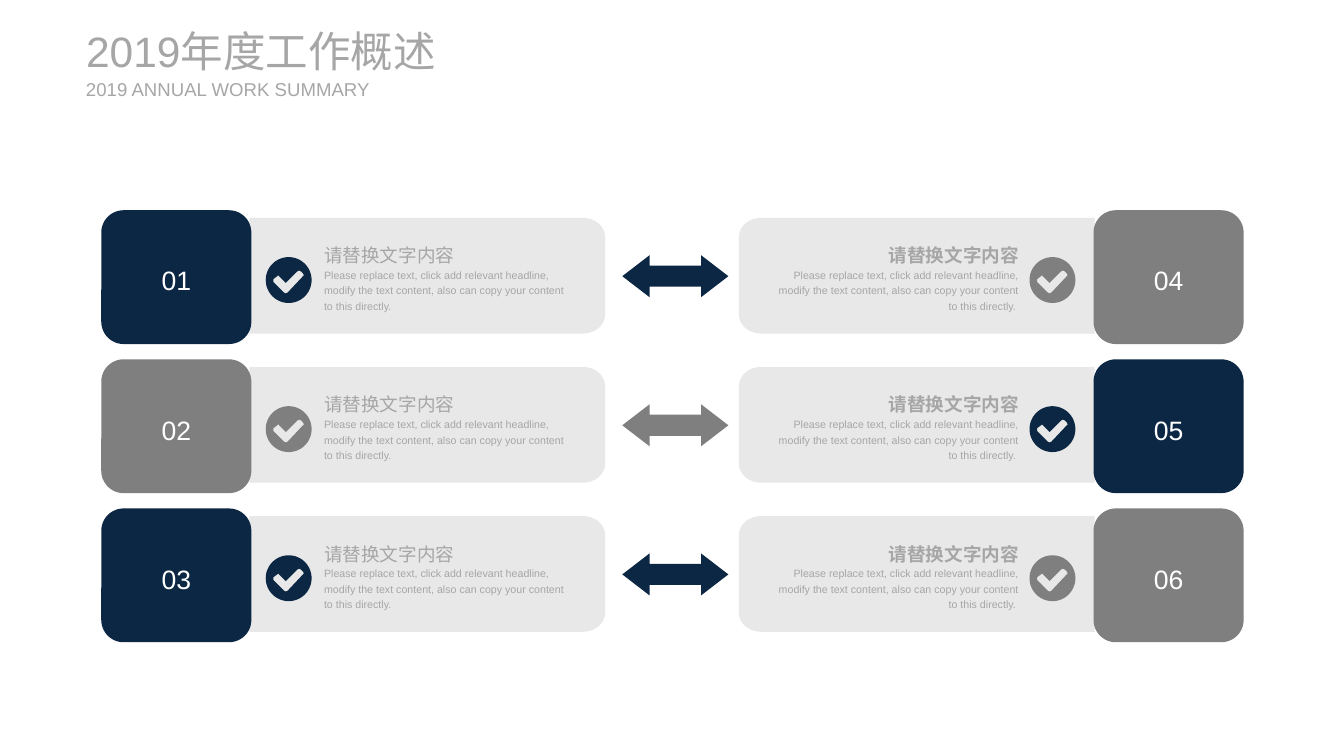
from dataclasses import dataclass
from math import cos, radians, sin

from lxml.etree import SubElement
from pptx import Presentation
from pptx.dml.color import RGBColor
from pptx.enum.shapes import MSO_SHAPE as Preset
from pptx.enum.text import MSO_ANCHOR as Anchor, MSO_AUTO_SIZE as AutoSize, PP_ALIGN as Align
from pptx.oxml.ns import qn
from pptx.util import Inches, Pt


@dataclass(frozen=True)
class Theme:
    navy: RGBColor = RGBColor(0x0C, 0x27, 0x44)
    gray: RGBColor = RGBColor(0x7F, 0x7F, 0x7F)
    panel: RGBColor = RGBColor(0xE6, 0xE6, 0xE6)
    text: RGBColor = RGBColor(0xA6, 0xA6, 0xA6)
    white: RGBColor = RGBColor(0xFF, 0xFF, 0xFF)
    font: str = "Arial"
    title: Pt = Pt(32)
    heading: Pt = Pt(14)
    body: Pt = Pt(8)
    number: Pt = Pt(20)


THEME = Theme()
ROWS = 3
ROW_PITCH = 1.56
PANEL_W, PANEL_H = 3.72, 1.21
CORNER_W, CORNER_H = 0.23, 0.2
BADGE_SIZE = 0.48
HEADING = "请替换文字内容"
BODY = ("Please replace text, click add relevant headline, modify the text content, "
        "also can copy your content to this directly.")
# Tick outline, measured from the badge's top left corner
TICK = [(0.39, 0.17), (0.37, 0.15), (0.35, 0.14), (0.33, 0.15), (0.21, 0.27),
        (0.14, 0.2), (0.13, 0.19), (0.12, 0.2), (0.08, 0.23), (0.08, 0.26),
        (0.19, 0.37), (0.21, 0.38), (0.23, 0.37), (0.39, 0.2), (0.4, 0.19)]


def set_values(target, values):
    for name, value in values.items():
        setattr(target, name, value)


def paint(shape, color, opacity=100):
    shape.shadow.inherit = False
    shape.fill.solid()
    shape.fill.fore_color.rgb = color
    shape.line.fill.background()
    if opacity < 100:
        tint = shape.fill._xPr.find(qn("a:solidFill"))[0]
        SubElement(tint, qn("a:alpha")).set("val", str(opacity * 1000))


def arc(center_x, center_y, radius_x, radius_y, start, sweep, steps):
    angles = [radians(start + sweep * i / steps) for i in range(steps + 1)]
    return [(center_x + radius_x * cos(a), center_y + radius_y * sin(a)) for a in angles]


def add_outline(slide, contours, color, opacity=100):
    scaled = [[(Inches(x), Inches(y)) for x, y in points] for points in contours]
    builder = slide.shapes.build_freeform(*scaled[0][0], scale=1.0)
    for index, points in enumerate(scaled):
        if index:
            builder.move_to(*points[0])
        builder.add_line_segments(points[1:], close=True)
    paint(builder.convert_to_shape(), color, opacity)


def add_panel(slide, left, top, rounded_left):
    inner_x = PANEL_W - CORNER_W
    points = [(0, 0)]
    points += arc(inner_x, CORNER_H, CORNER_W, CORNER_H, -90, 90, 12)
    points += arc(inner_x, PANEL_H - CORNER_H, CORNER_W, CORNER_H, 0, 90, 12)
    points.append((0, PANEL_H))
    if rounded_left:
        points = [(PANEL_W - x, y) for x, y in points]
    add_outline(slide, [[(left + x, top + y) for x, y in points]], THEME.panel, 90)


def add_badge(slide, left, top, color):
    radius = BADGE_SIZE / 2
    circle = arc(left + radius, top + radius, radius, radius, 0, 360, 72)
    tick = [(left + x, top + y) for x, y in TICK]
    add_outline(slide, [circle, tick], color)


def set_frame(frame, **values):
    margins = dict.fromkeys(("margin_left", "margin_top", "margin_right", "margin_bottom"), 0)
    set_values(frame, {"word_wrap": True, **margins, **values})


def add_run(paragraph, text, size, color=THEME.text, bold=False):
    run = paragraph.add_run()
    run.text = text
    set_values(run.font, {"name": THEME.font, "size": size, "bold": bold})
    run.font.color.rgb = color


def add_text(slide, box, **frame_values):
    frame = slide.shapes.add_textbox(*map(Inches, box)).text_frame
    set_frame(frame, auto_size=AutoSize.SHAPE_TO_FIT_TEXT, **frame_values)
    return frame.paragraphs[0]


def add_title(slide, box, text, size):
    add_run(add_text(slide, box, vertical_anchor=Anchor.MIDDLE), text, size)


def add_description(slide, left, top, on_right):
    paragraph = add_text(slide, (left, top, 2.58, 0.77))
    set_values(paragraph, {"alignment": Align.RIGHT if on_right else Align.LEFT,
                           "line_spacing": 1.2})
    add_run(paragraph, HEADING, THEME.heading, bold=on_right)
    paragraph.add_line_break()
    add_run(paragraph, BODY + (" " if on_right else ""), THEME.body)


def add_number(slide, left, top, number, color):
    tile = slide.shapes.add_shape(Preset.ROUNDED_RECTANGLE, Inches(left), Inches(top),
                                  Inches(1.57), Inches(1.4))
    paint(tile, color)
    set_frame(tile.text_frame, vertical_anchor=Anchor.MIDDLE)
    paragraph = tile.text_frame.paragraphs[0]
    set_values(paragraph, {"alignment": Align.CENTER, "line_spacing": 1.2})
    add_run(paragraph, f"{number:02d}", THEME.number, THEME.white)


def add_arrow(slide, top, color):
    arrow = slide.shapes.add_shape(Preset.LEFT_RIGHT_ARROW, Inches(6.51), Inches(top),
                                   Inches(1.11), Inches(0.44))
    arrow.adjustments[0], arrow.adjustments[1] = 0.5, 0.65
    paint(arrow, color)


def add_item(slide, row, on_right, color):
    panel_x, badge_x, text_x, tile_x = (
        (7.73, 10.77, 8.08, 11.44) if on_right else (2.61, 2.78, 3.39, 1.06))
    offset = row * ROW_PITCH
    add_panel(slide, panel_x, 2.28 + offset, on_right)
    add_description(slide, text_x, 2.51 + offset, on_right)
    add_badge(slide, badge_x, 2.69 + offset, color)
    add_number(slide, tile_x, 2.2 + offset, row + 1 + ROWS * on_right, color)


def main():
    deck = Presentation()
    set_values(deck, {"slide_width": Inches(14.06), "slide_height": Inches(7.91)})
    slide = deck.slides.add_slide(deck.slide_layouts[6])

    # Heading
    add_title(slide, (0.9, 0.26, 4.32, 0.54), "2019年度工作概述", THEME.title)
    add_title(slide, (0.9, 0.81, 3.07, 0.24), "2019 ANNUAL WORK SUMMARY", THEME.heading)

    # Facing items joined by arrows, in alternating colours
    colors = (THEME.navy, THEME.gray)
    for row in range(ROWS):
        for on_right in (False, True):
            add_item(slide, row, on_right, colors[(row + on_right) % 2])
        add_arrow(slide, 2.67 + row * ROW_PITCH, colors[row % 2])

    deck.save("out.pptx")


if __name__ == "__main__":
    main()
